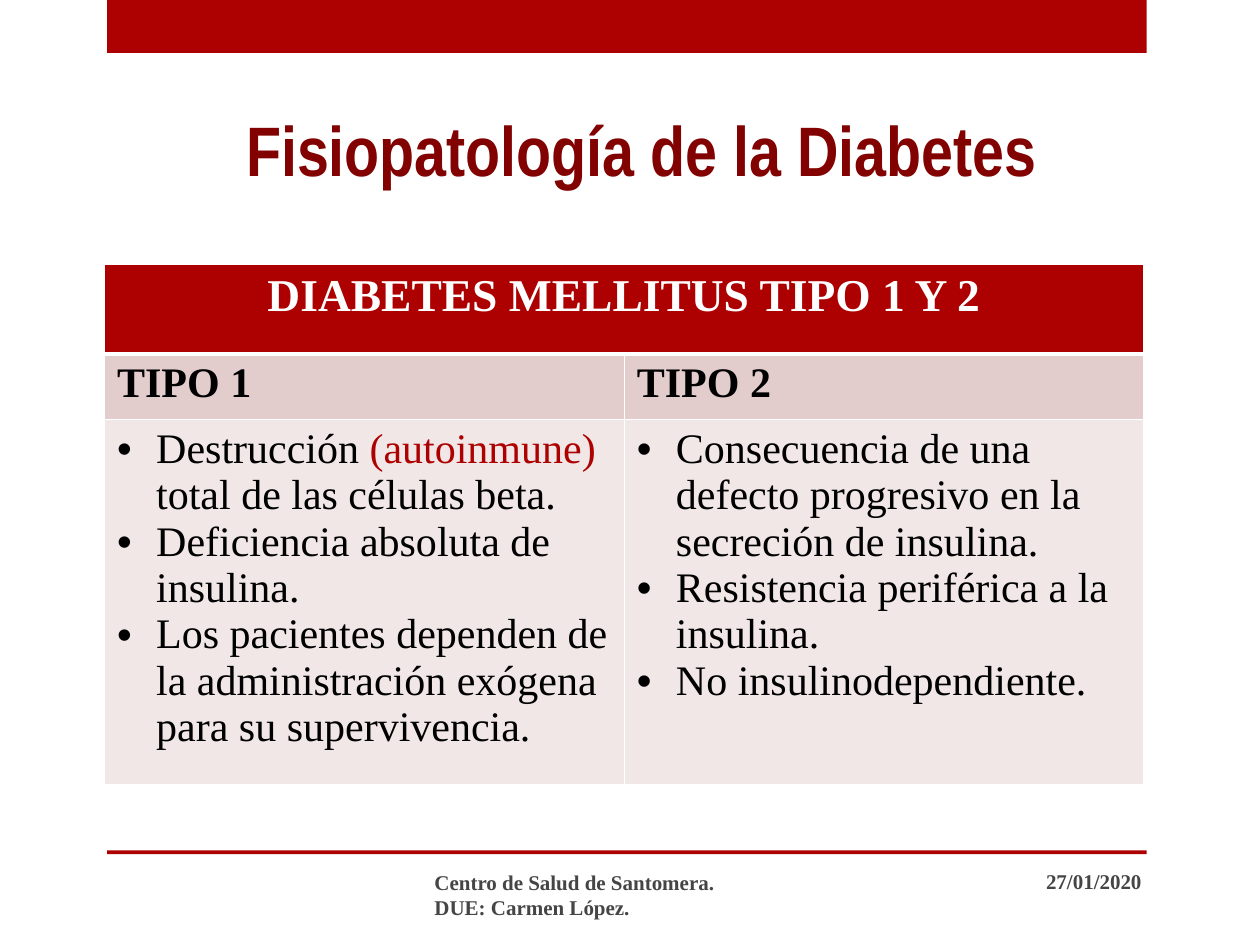
from pptx import Presentation, util as u
from pptx.dml import color
from pptx.enum import shapes, text
from pptx.oxml import parse_xml, ns

WIDE, HIGH = 10, 7.5
RED, DARK, GREY, WHITE, BLACK = "AD0101", "820101", "454545", "FFFFFF", "000000"
SERIF = "Times New Roman"
HEAD = "DIABETES MELLITUS TIPO 1 Y 2"
TYPES = [
    ("TIPO 1", [
        [("Destrucción ", BLACK), ("(autoinmune) ", RED),
         ("total de las células beta.", BLACK)],
        [("Deficiencia absoluta de insulina.", BLACK)],
        [("Los pacientes dependen de la administración exógena "
          "para su supervivencia.", BLACK)]]),
    ("TIPO 2", [
        [("Consecuencia de una defecto progresivo en la secreción de insulina.", BLACK)],
        [("Resistencia periférica a la insulina.", BLACK)],
        [("No insulinodependiente.", BLACK)]]),
]


def rgb(code):
    """Turn a hex string into a colour."""
    return color.RGBColor.from_string(code)


def inch(box):
    """Turn a box in inches into lengths."""
    return [u.Inches(n) for n in box]


def add_run(para, words, size, tone, bold=True, face=SERIF):
    """Add one styled run to a paragraph."""
    run = para.add_run()
    run.text = words
    font = run.font
    font.size, font.bold, font.name = u.Pt(size), bold, face
    font.color.rgb = rgb(tone)


def add_bar(slide, box):
    """Draw a plain red bar."""
    bar = slide.shapes.add_shape(shapes.MSO_SHAPE.RECTANGLE, *inch(box))
    bar.shadow.inherit = False
    bar.fill.solid()
    bar.fill.fore_color.rgb = rgb(RED)
    bar.line.fill.background()


def add_label(slide, box, lines, size, tone, align, anchor, face=SERIF):
    """Place a bold text box whose lines share one paragraph."""
    frame = slide.shapes.add_textbox(*inch(box)).text_frame
    frame.word_wrap, frame.vertical_anchor = True, anchor
    para = frame.paragraphs[0]
    para.alignment = align
    for i, line in enumerate(lines):
        if i:
            para.add_line_break()
        add_run(para, line, size, tone, face=face)


def paint(cell, tone, top=1, base=1):
    """Give a cell white borders and a solid fill."""
    props = cell._tc.get_or_add_tcPr()
    for side, width in zip("LRTB", (1, 1, top, base)):
        props.append(parse_xml(
            f'<a:ln{side} {ns.nsdecls("a")} w="{u.Pt(width)}"><a:solidFill>'
            f'<a:srgbClr val="{WHITE}"/></a:solidFill></a:ln{side}>'))
    cell.fill.solid()
    cell.fill.fore_color.rgb = rgb(tone)


def add_list(frame, items, indent=0.31):
    """Fill a text frame with bulleted paragraphs."""
    for i, item in enumerate(items):
        para = frame.add_paragraph() if i else frame.paragraphs[0]
        props = para._p.get_or_add_pPr()
        props.set("marL", str(u.Inches(indent)))
        props.set("indent", str(-u.Inches(indent)))
        for tag in ('buFont typeface="Arial"', 'buChar char="•"'):
            props.append(parse_xml(f'<a:{tag} {ns.nsdecls("a")}/>'))
        for words, tone in item:
            add_run(para, words, 24, tone, bold=False)


def add_grid(slide, box, rows):
    """Build the table that compares both types."""
    grid = slide.shapes.add_table(len(rows), len(TYPES), *inch(box)).table
    grid.first_row = grid.horz_banding = False
    for row, tall in zip(grid.rows, rows):
        row.height = u.Inches(tall)
    for col, (name, items) in enumerate(TYPES):
        top, mid, low = (grid.cell(row, col) for row in range(3))
        paint(top, RED, base=3)
        paint(mid, "E3CCCC", top=3)
        paint(low, "F1E7E7")
        add_run(mid.text_frame.paragraphs[0], name, 24, BLACK)
        add_list(low.text_frame, items)
    head = grid.cell(0, 0)
    head.merge(grid.cell(0, len(TYPES) - 1))
    para = head.text_frame.paragraphs[0]
    para.alignment = text.PP_ALIGN.CENTER
    add_run(para, HEAD, 26, WHITE)


def add_foot(slide, left, top, wide):
    """Place the rule, the centre's name and the date."""
    align, mid = text.PP_ALIGN, text.MSO_ANCHOR.MIDDLE
    add_bar(slide, (left, top, wide, 0.03))
    add_label(slide, (left + 2.5, top + 0.15, 3.17, 0.4),
              ["Centro de Salud de Santomera.", "DUE: Carmen López."],
              12, GREY, align.LEFT, mid)
    add_label(slide, (left + 5.98, top + 0.04, 2.33, 0.4),
              ["27/01/2020"], 12, GREY, align.RIGHT, mid)


def main():
    """Build and save the slide."""
    deck = Presentation()
    deck.slide_width, deck.slide_height = inch((WIDE, HIGH))
    slide = deck.slides.add_slide(deck.slide_layouts[6])
    left, wide = 0.085 * WIDE, 0.825 * WIDE
    add_bar(slide, (left, 0, wide, 0.42))
    add_label(slide, (1.38, 0.68, 7.42, 0.88), ["Fisiopatología de la Diabetes"],
              40, DARK, text.PP_ALIGN.CENTER, text.MSO_ANCHOR.BOTTOM, "Arial Narrow")
    rows = (0.71, 0.52, 2.67)
    add_grid(slide, (0.83, 0.28 * HIGH, wide, sum(rows)), rows)
    add_foot(slide, left, 0.9 * HIGH, wide)
    deck.save("out.pptx")


if __name__ == "__main__":
    main()
